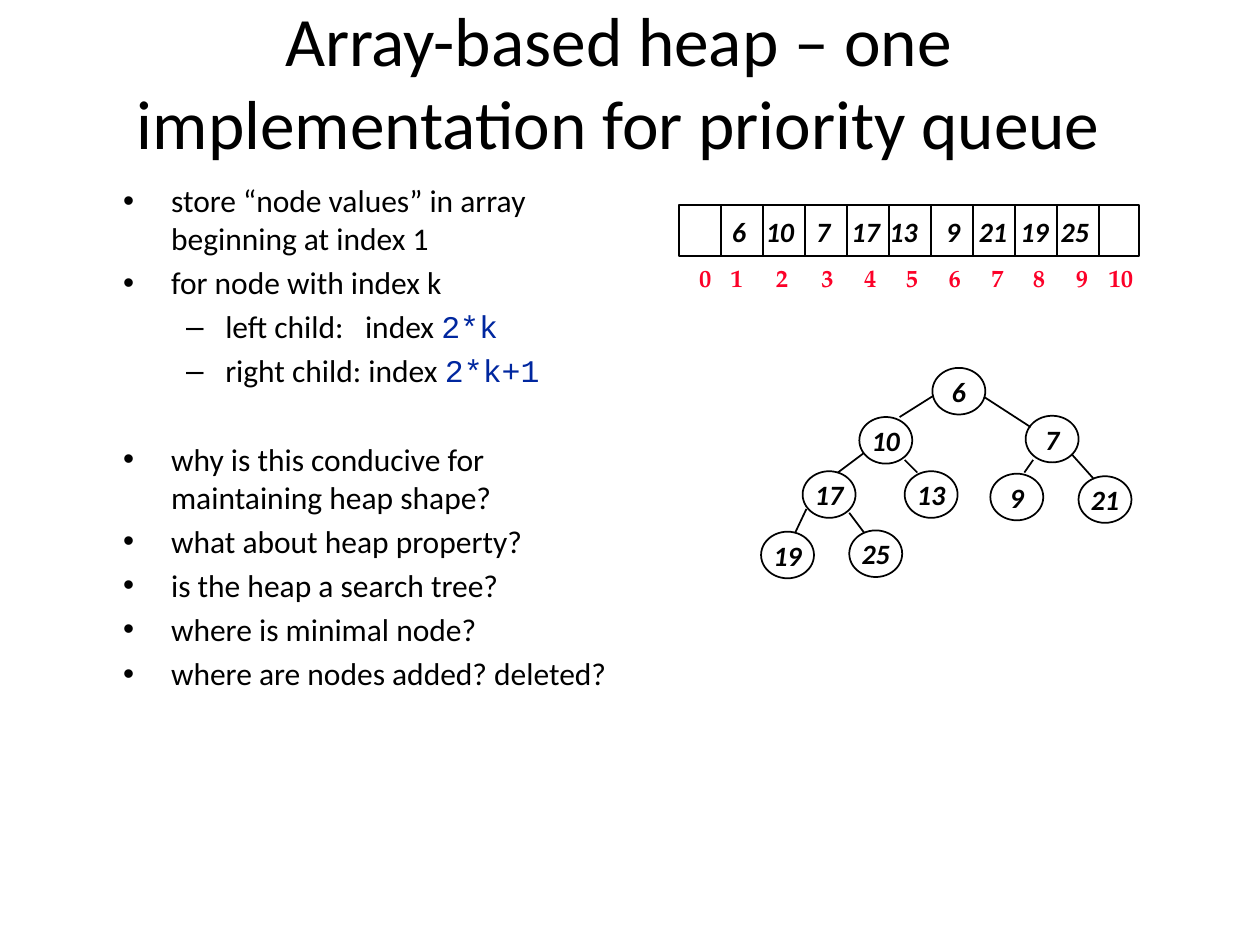
from lxml.etree import SubElement
from pptx import Presentation
from pptx.dml.color import RGBColor
from pptx.enum.shapes import MSO_CONNECTOR, MSO_SHAPE
from pptx.enum.text import MSO_ANCHOR, MSO_AUTO_SIZE, PP_ALIGN
from pptx.oxml.ns import qn
from pptx.util import Inches, Pt

BLACK, RED, BLUE = "000000", "FC0128", "00279F"
BODY_FONT, CODE_FONT, INDEX_FONT = "Calibri", "Courier New", "TeX Gyre Pagella"

# (level, space before in points, [(text, font, colour), ...])
BULLETS = [
    (0, 3.6, [("store “node values” in array beginning at index 1", BODY_FONT, BLACK)]),
    (0, 3.6, [("for node with index k", BODY_FONT, BLACK)]),
    (1, 3.6, [("left child:", BODY_FONT, BLACK), (" ", BODY_FONT, BLACK),
              ("index ", BODY_FONT, BLACK), ("2*k", CODE_FONT, BLUE)]),
    (1, 3.6, [("right child: index ", BODY_FONT, BLACK), ("2*k+1", CODE_FONT, BLUE)]),
    (0, 29, [("why is this conducive for maintaining heap shape?", BODY_FONT, BLACK)]),
    (0, 3.6, [("what about heap property?", BODY_FONT, BLACK)]),
    (0, 3.6, [("is the heap a search tree?", BODY_FONT, BLACK)]),
    (0, 3.6, [("where is minimal node?", BODY_FONT, BLACK)]),
    (0, 3.6, [("where are nodes added? deleted?", BODY_FONT, BLACK)]),
]
LEVELS = [("•", 0.38, -0.38), ("–", 0.81, -0.31)]  # bullet, margin, indent

INDEX_LEFTS = [5.45, 5.7, 6.06, 6.42, 6.76, 7.09, 7.43, 7.77, 8.1, 8.44, 8.7]

# value, left of its array label, left and top of its tree node
HEAP = [
    (6, 5.71, 7.4, 2.92),
    (10, 5.98, 6.82, 3.31),
    (7, 6.38, 8.14, 3.3),
    (17, 6.66, 6.37, 3.74),
    (13, 6.96, 7.18, 3.74),
    (9, 7.41, 7.86, 3.76),
    (21, 7.67, 8.56, 3.78),
    (19, 8.0, 6.04, 4.22),
    (25, 8.32, 6.74, 4.21),
]
EDGES = [
    (7.41, 3.14, 7.14, 3.31), (6.85, 3.6, 6.65, 3.75),
    (6.4, 4.04, 6.31, 4.23), (6.74, 4.07, 6.86, 4.23),
    (7.18, 3.65, 7.28, 3.75), (7.81, 3.15, 8.18, 3.39),
    (8.2, 3.65, 8.13, 3.75), (8.51, 3.61, 8.68, 3.8),
]


def color(value):
    return RGBColor.from_string(value)


def format_run(run, font_name, size, font_color, bold=False, italic=False):
    font = run.font
    font.name, font.size = font_name, Pt(size)
    font.bold, font.italic = bold, italic
    font.color.rgb = color(font_color)


def add_box(shapes, left, top, width, height):
    return shapes.add_textbox(Inches(left), Inches(top), Inches(width), Inches(height))


def add_title(shapes, text):
    text_frame = add_box(shapes, 0.78, 0.25, 8.26, 0.78).text_frame
    text_frame.word_wrap = True
    text_frame.vertical_anchor = MSO_ANCHOR.MIDDLE
    text_frame.text = text
    paragraph = text_frame.paragraphs[0]
    paragraph.alignment = PP_ALIGN.CENTER
    format_run(paragraph.runs[0], BODY_FONT, 39.6, BLACK)


def set_bullet(paragraph, level):
    character, margin, indent = LEVELS[level]
    paragraph.level = level
    properties = paragraph._p.get_or_add_pPr()
    properties.set("marL", str(Inches(margin)))
    properties.set("indent", str(Inches(indent)))
    SubElement(properties, qn("a:buFont"), typeface="Arial")
    SubElement(properties, qn("a:buChar"), char=character)


def add_bullets(shapes):
    text_frame = add_box(shapes, 0.88, 1.39, 4.04, 4.92).text_frame
    text_frame.word_wrap = True
    for number, (level, space_before, parts) in enumerate(BULLETS):
        paragraph = text_frame.add_paragraph() if number else text_frame.paragraphs[0]
        paragraph.space_before = Pt(space_before)
        set_bullet(paragraph, level)
        for text, font_name, font_color in parts:
            run = paragraph.add_run()
            run.text = text
            format_run(run, font_name, 18, font_color)
            if text == " ":
                # Widen the gap that lines up the two "index" words
                run.font._element.set("spc", "810")


def add_label(shapes, text, left, top, width, height, **font):
    text_frame = add_box(shapes, left, top, width, height).text_frame
    text_frame.word_wrap = False
    text_frame.auto_size = MSO_AUTO_SIZE.SHAPE_TO_FIT_TEXT
    text_frame.text = text
    format_run(text_frame.paragraphs[0].runs[0], bold=True, **font)


def add_outline(shapes, kind, left, top, width, height):
    shape = shapes.add_shape(kind, Inches(left), Inches(top), Inches(width), Inches(height))
    shape.shadow.inherit = False
    shape.fill.background()
    shape.line.color.rgb = color(BLACK)
    shape.line.width = Pt(1)
    return shape


def add_line(shapes, *ends):
    line = shapes.add_connector(MSO_CONNECTOR.STRAIGHT, *map(Inches, ends))
    line.line.color.rgb = color(BLACK)
    line.line.width = Pt(1)
    SubElement(line._element.spPr, qn("a:effectLst"))


def add_node(shapes, text, left, top):
    node = add_outline(shapes, MSO_SHAPE.OVAL, left, top, 0.42, 0.37)
    text_frame = node.text_frame
    text_frame.word_wrap = False
    text_frame.vertical_anchor = MSO_ANCHOR.MIDDLE
    text_frame.text = text
    paragraph = text_frame.paragraphs[0]
    paragraph.alignment = PP_ALIGN.CENTER
    format_run(paragraph.runs[0], BODY_FONT, 16, BLACK, bold=True, italic=True)


def add_array(shapes):
    add_outline(shapes, MSO_SHAPE.RECTANGLE, 5.39, 1.63, 3.65, 0.4)
    for divider in range(10):
        x = 5.72 + divider / 3
        add_line(shapes, x, 1.62, x, 2.04)
    for index, left in enumerate(INDEX_LEFTS):
        add_label(shapes, str(index), left, 2.04, 0.3 if index < 10 else 0.42, 0.33,
                  font_name=INDEX_FONT, size=14, font_color=RED)
    for value, left, *_ in HEAP:
        add_label(shapes, str(value), left, 1.65, 0.33 if value < 10 else 0.47, 0.36,
                  font_name=BODY_FONT, size=16, font_color=BLACK, italic=True)


def add_tree(shapes):
    for value, _, left, top in HEAP:
        add_node(shapes, str(value), left, top)
    for edge in EDGES:
        add_line(shapes, *edge)


def main():
    presentation = Presentation()
    presentation.slide_width, presentation.slide_height = Inches(10), Inches(7.5)
    slide = presentation.slides.add_slide(presentation.slide_layouts[6])
    add_title(slide.shapes, "Array-based heap – one implementation for priority queue")
    add_bullets(slide.shapes)
    add_array(slide.shapes.add_group_shape().shapes)
    add_tree(slide.shapes.add_group_shape().shapes)
    presentation.save("out.pptx")


if __name__ == "__main__":
    main()
